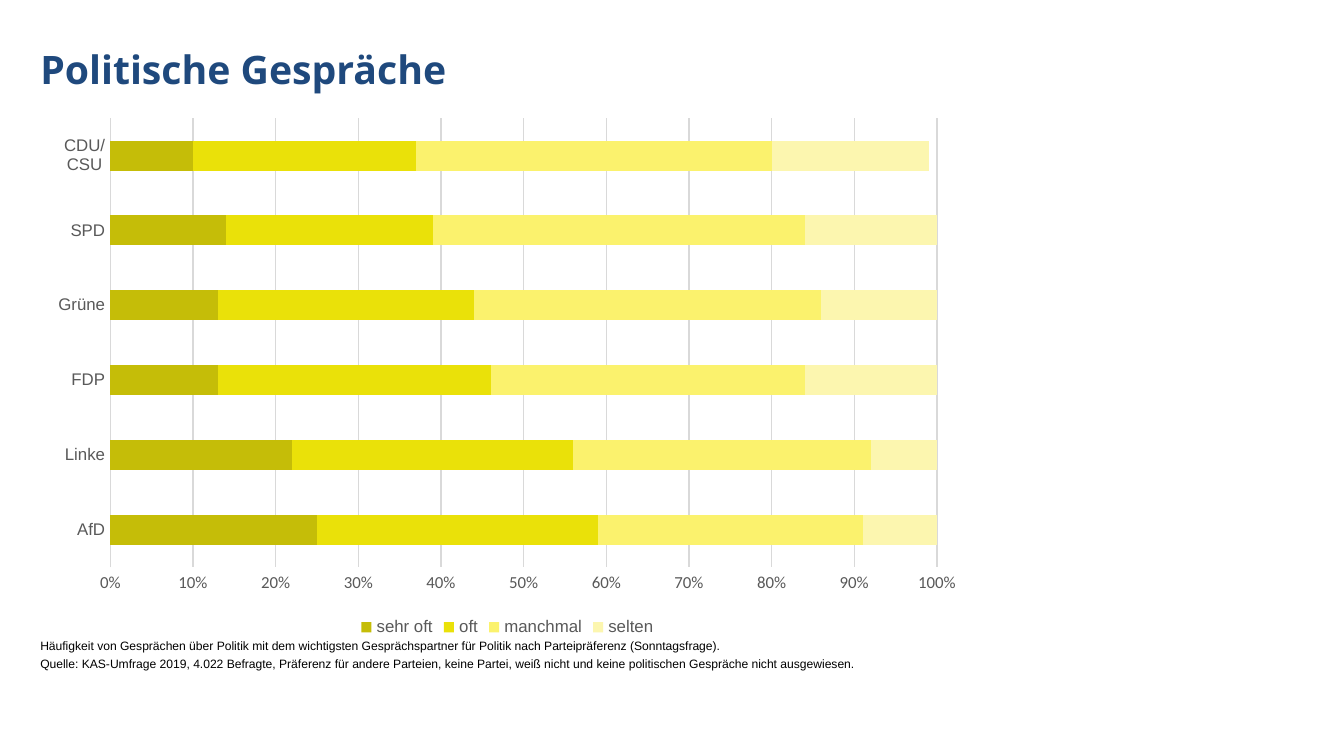
from lxml import etree
from pptx import Presentation
from pptx.chart.data import CategoryChartData
from pptx.dml.color import RGBColor
from pptx.enum.chart import XL_CHART_TYPE, XL_LEGEND_POSITION, XL_TICK_MARK
from pptx.enum.text import MSO_ANCHOR
from pptx.oxml.ns import qn
from pptx.util import Pt

PARTIES = ["AfD", "Linke", "FDP", "Grüne", "SPD", "CDU/CSU"]
FREQUENCIES = [
    ("sehr oft", "C5BD08", [0.25, 0.22, 0.13, 0.13, 0.14, 0.10]),
    ("oft", "EAE109", [0.34, 0.34, 0.33, 0.31, 0.25, 0.27]),
    ("manchmal", "FBF26D", [0.32, 0.36, 0.38, 0.42, 0.45, 0.43]),
    ("selten", "FCF6AF", [0.09, 0.08, 0.16, 0.14, 0.16, 0.19]),
]
NOTES = [
    "Häufigkeit von Gesprächen über Politik mit dem wichtigsten Gesprächspartner "
    "für Politik nach Parteipräferenz (Sonntagsfrage).",
    "Quelle: KAS-Umfrage 2019, 4.022 Befragte, Präferenz für andere Parteien, "
    "keine Partei, weiß nicht und keine politischen Gespräche nicht ausgewiesen.",
]


def rgb(value):
    return RGBColor.from_string(value)


def set_font(font, name, size, color, bold=False):
    font.name = name
    font.size = Pt(size)
    font.bold = bold
    font.color.rgb = rgb(color)


def write(frame, lines, gap=0, **style):
    """Fill a text frame with one paragraph per line, gap points apart."""
    for index, line in enumerate(lines):
        paragraph = frame.paragraphs[0] if index == 0 else frame.add_paragraph()
        if index:
            paragraph.space_before = Pt(gap)
        run = paragraph.add_run()
        run.text = line
        set_font(run.font, **style)


def place_plot(chart, **fractions):
    """Fix the inner plot area as fractions of the chart."""
    plot_area = chart.element.find(".//" + qn("c:plotArea"))
    layout = plot_area.find(qn("c:layout"))
    if layout is None:
        layout = etree.Element(qn("c:layout"))
        plot_area.insert(0, layout)
    manual = etree.SubElement(layout, qn("c:manualLayout"))
    settings = {"layoutTarget": "inner", "xMode": "edge", "yMode": "edge", **fractions}
    for tag, value in settings.items():
        etree.SubElement(manual, qn("c:" + tag)).set("val", str(value))


class SurveySlide:
    heading_color = "1F497D"
    label_color = "595959"
    grid_color = "D9D9D9"
    left = 21.6

    def __init__(self, deck):
        self.slide = deck.slides.add_slide(deck.slide_layouts[6])

    def text(self, lines, top, width, height, anchor, **style):
        box = self.slide.shapes.add_textbox(Pt(self.left), Pt(top), Pt(width), Pt(height))
        frame = box.text_frame
        frame.word_wrap = True
        frame.vertical_anchor = anchor
        frame.margin_left = frame.margin_top = frame.margin_right = frame.margin_bottom = 0
        write(frame, lines, **style)

    def grid_line(self, line):
        line.color.rgb = rgb(self.grid_color)
        line.width = Pt(0.75)

    def axis(self, axis, font_name):
        axis.major_tick_mark = axis.minor_tick_mark = XL_TICK_MARK.NONE
        set_font(axis.tick_labels.font, font_name, 9, self.label_color)

    def stacked_bars(self, categories, series, top, width, height):
        data = CategoryChartData(number_format="0%")
        data.categories = categories
        for name, _, shares in series:
            data.add_series(name, shares)
        chart = self.slide.shapes.add_chart(
            XL_CHART_TYPE.BAR_STACKED, Pt(self.left), Pt(top), Pt(width), Pt(height), data
        ).chart
        set_font(chart.font, "Calibri", 10, "000000")
        chart.has_title = False

        plot = chart.plots[0]
        plot.gap_width, plot.overlap = 150, 100
        plot.vary_by_categories = False
        for bars, (_, color, _) in zip(plot.series, series):
            bars.format.fill.solid()
            bars.format.fill.fore_color.rgb = rgb(color)

        self.axis(chart.category_axis, "Arial")
        self.grid_line(chart.category_axis.format.line)
        shares_axis = chart.value_axis
        self.axis(shares_axis, "Calibri")
        shares_axis.minimum_scale, shares_axis.maximum_scale = 0, 1
        shares_axis.major_unit = 0.1
        shares_axis.tick_labels.number_format = "0%"
        shares_axis.tick_labels.number_format_is_linked = False
        shares_axis.format.line.fill.background()
        shares_axis.has_major_gridlines = True
        self.grid_line(shares_axis.major_gridlines.format.line)

        chart.has_legend = True
        chart.legend.position = XL_LEGEND_POSITION.BOTTOM
        chart.legend.include_in_layout = False
        set_font(chart.legend.font, "Arial", 9, self.label_color)
        place_plot(chart, x=0.075, y=0.02, w=0.885, h=0.84)


def main():
    deck = Presentation()
    deck.slide_width, deck.slide_height = Pt(720), Pt(405)
    survey = SurveySlide(deck)
    survey.text(["Politische Gespräche"], 25.2, 677.5, 23.8, MSO_ANCHOR.MIDDLE,
                name="Open Sans", size=21, color=survey.heading_color, bold=True)
    survey.text(NOTES, 344.2, 676.8, 15.1, MSO_ANCHOR.BOTTOM,
                gap=1.9, name="Arial", size=6.5, color="000000")
    survey.stacked_bars(PARTIES, FREQUENCIES, 57.6, 500.4, 286.6)
    deck.save("out.pptx")


if __name__ == "__main__":
    main()
